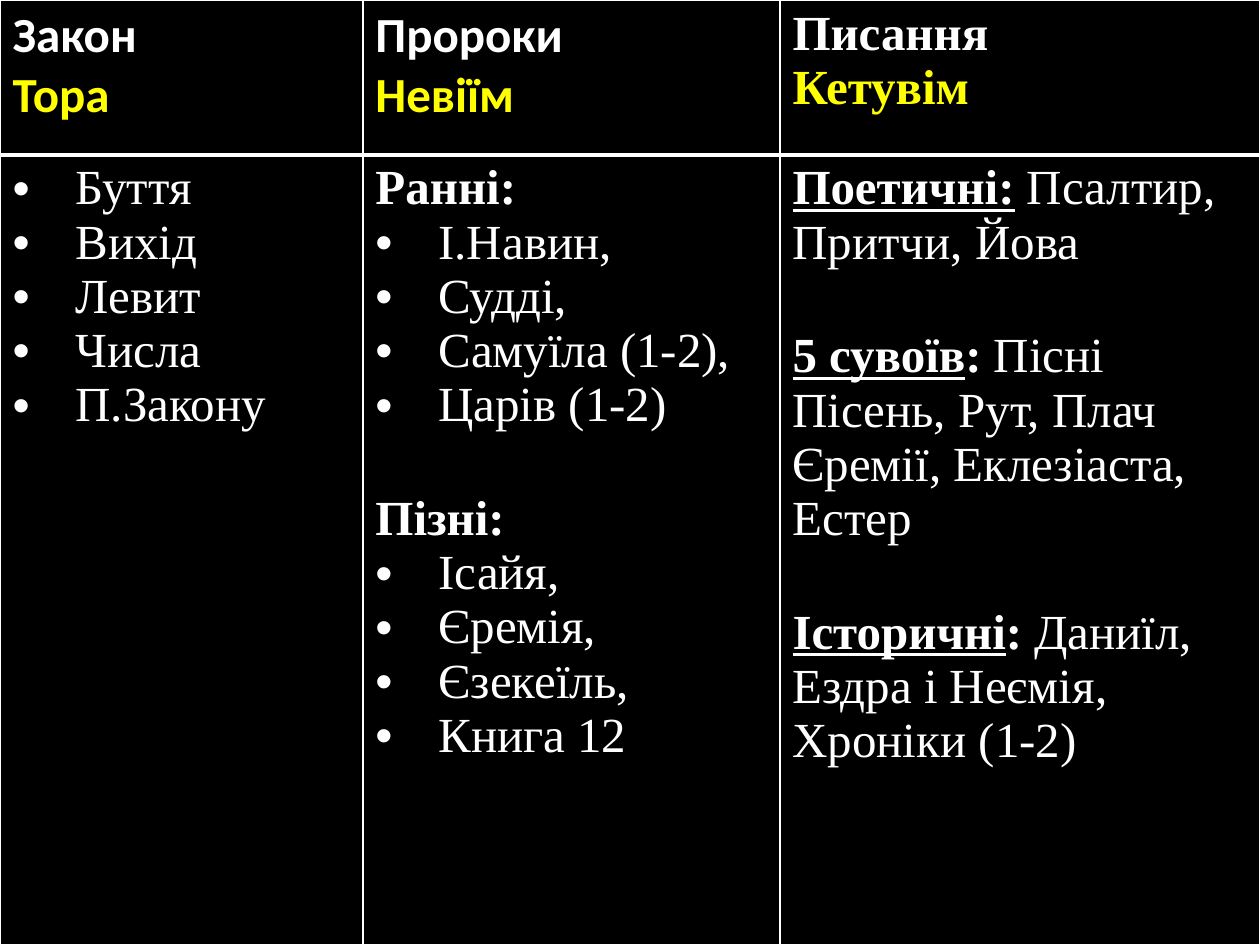
from dataclasses import dataclass

from lxml import etree
from pptx import Presentation, util as u
from pptx.dml.color import RGBColor
from pptx.oxml.ns import qn

HUES = {"back": "000000", "text": "FFFFFF", "name": "FFFF00"}
SANS, SERIF = "Calibri", "Times New Roman"
SIZE = u.Pt(28)
GAP = u.Pt(34)  # one line between groups
WIDTHS = (2.88, 3.31, 3.81)
HEIGHTS = (1.23, 6.27)


@dataclass
class Bit:
    words: str
    bold: bool = False
    under: bool = False
    hue: str = "text"
    face: str = SERIF


@dataclass
class Line:
    bits: list[Bit]
    dot: bool = False
    gap: bool = False


def head(title: str, name: str, face: str) -> list[Line]:
    return [Line([Bit(title, bold=True, face=face)]),
            Line([Bit(name, bold=True, hue="name", face=face)])]


def books(*names: str) -> list[Line]:
    return [Line([Bit(name)], dot=True) for name in names]


def group(title: str, gap: bool = False) -> Line:
    return Line([Bit(title, bold=True)], gap=gap)


ROWS = [
    [head("Закон", "Тора", SANS),
     head("Пророки", "Невіїм", SANS),
     head("Писання", "Кетувім", SERIF)],
    [books("Буття", "Вихід", "Левит", "Числа", "П.Закону"),
     [group("Ранні:"),
      *books("І.Навин,", "Судді,", "Самуїла (1-2),", "Царів (1-2)"),
      group("Пізні:", gap=True),
      *books("Ісайя,", "Єремія,", "Єзекеїль,", "Книга 12")],
     [Line([Bit("Поетичні:", True, True), Bit(" Псалтир, Притчи, Йова")]),
      Line([Bit("5 сувоїв", True, True), Bit(":", True),
            Bit(" Пісні Пісень, Рут, Плач Єремії, Еклезіаста, Естер")], gap=True),
      Line([Bit("Історичні", True, True), Bit(": ", True),
            Bit("Даниїл, Ездра і Неємія, Хроніки (1-2)")], gap=True)]],
]


def color(key: str) -> RGBColor:
    return RGBColor.from_string(HUES[key])


def add_dot(para) -> None:
    props = para._p.get_or_add_pPr()
    props.set("marL", str(u.Inches(0.5)))
    props.set("indent", str(u.Inches(-0.5)))
    etree.SubElement(props, qn("a:buFont"), typeface="Arial")
    etree.SubElement(props, qn("a:buChar"), char="•")


def write(frame, lines: list[Line]) -> None:
    for i, line in enumerate(lines):
        para = frame.add_paragraph() if i else frame.paragraphs[0]
        if line.gap:
            para.space_before = GAP
        if line.dot:
            add_dot(para)
        for bit in line.bits:
            run = para.add_run()
            run.text = bit.words
            font = run.font
            font.name, font.size = bit.face, SIZE
            font.bold, font.underline = bit.bold, bit.under
            font.color.rgb = color(bit.hue)


def edge(cell, sides: dict[str, float]) -> None:
    props = cell._tc.get_or_add_tcPr()
    for side, width in sides.items():
        line = etree.SubElement(props, qn(f"a:ln{side}"), w=str(u.Pt(width)))
        fill = etree.SubElement(line, qn("a:solidFill"))
        etree.SubElement(fill, qn("a:srgbClr"), val=HUES["text"])


def main() -> None:
    deck = Presentation()
    deck.slide_width, deck.slide_height = u.Inches(10), u.Inches(7.5)
    slide = deck.slides.add_slide(deck.slide_layouts[6])
    slide.background.fill.solid()
    slide.background.fill.fore_color.rgb = color("back")

    # Table over the whole slide
    table = slide.shapes.add_table(len(HEIGHTS), len(WIDTHS), u.Inches(0), u.Inches(0),
                                   deck.slide_width, deck.slide_height).table
    for col, width in zip(table.columns, WIDTHS):
        col.width = u.Inches(width)
    for row, height in zip(table.rows, HEIGHTS):
        row.height = u.Inches(height)

    # Cells, with a thick rule under the header
    for r, row in enumerate(ROWS):
        top, base = (3, 1) if r else (1, 3)
        for c, lines in enumerate(row):
            cell = table.cell(r, c)
            edge(cell, {"L": 1, "R": 1, "T": top, "B": base})
            cell.fill.solid()
            cell.fill.fore_color.rgb = color("back")
            write(cell.text_frame, lines)

    deck.save("out.pptx")


if __name__ == "__main__":
    main()
